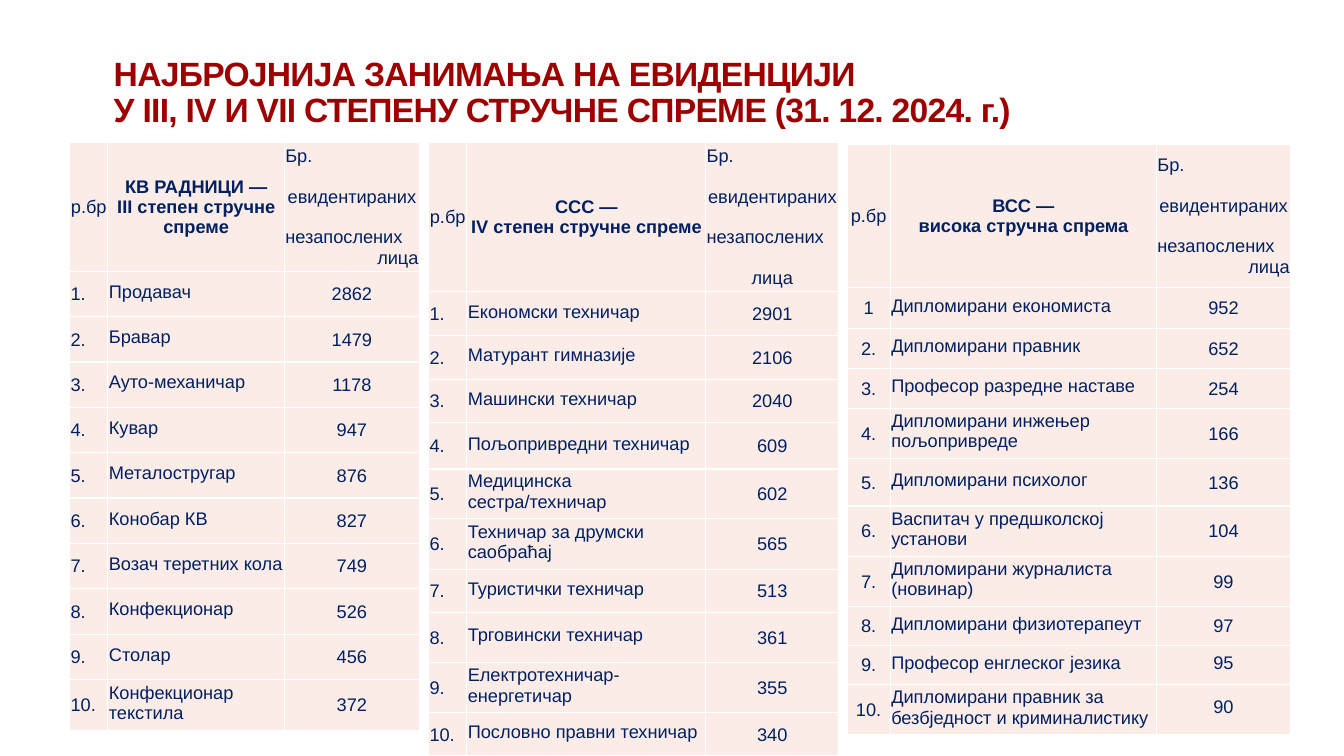
"""Build the slide of the most common occupations among registered unemployed people."""
from lxml.etree import SubElement
from pptx import Presentation
from pptx.dml.color import RGBColor
from pptx.enum.text import MSO_ANCHOR, PP_ALIGN
from pptx.oxml.ns import qn
from pptx.util import Inches, Pt

TITLE = "НАЈБРОЈНИЈА ЗАНИМАЊА НА ЕВИДЕНЦИЈИ\vУ III, IV И VII СТЕПЕНУ СТРУЧНЕ СПРЕМЕ (31. 12. 2024. г.)"
NUMBER_HEADER = "р.бр"
COUNT_HEADER = "Бр.\nевидентираних\nнезапослених\nлица"
TABLES = [
    {
        "place": (0.69, 1.41),
        "columns": (0.38, 1.75, 1.34),
        "rows": (1.22, 0.45, 0.45, 0.45, 0.45, 0.45, 0.45, 0.45, 0.45, 0.45, 0.51),
        "number_align": PP_ALIGN.LEFT,
        "last_header_line": (PP_ALIGN.RIGHT, 0),
        "first_number": "1.",
        "heading": "КВ РАДНИЦИ —\nIII степен стручне\nспреме",
        "occupations": [
            ("Продавач", 2862), ("Бравар", 1479), ("Ауто-механичар", 1178),
            ("Кувар", 947), ("Металостругар", 876), ("Конобар КВ", 827),
            ("Возач теретних кола", 749), ("Конфекционар", 526),
            ("Столар", 456), ("Конфекционар текстила", 372),
        ],
    },
    {
        "place": (4.25, 1.41),
        "columns": (0.38, 2.37, 1.32),
        "rows": (1.33, 0.44, 0.43, 0.43, 0.46, 0.42, 0.5, 0.43, 0.5, 0.43, 0.43),
        "number_align": PP_ALIGN.LEFT,
        "last_header_line": (PP_ALIGN.CENTER, 14.5),
        "first_number": "1.",
        "heading": "ССС —\nIV степен стручне спреме",
        "occupations": [
            ("Економски техничар", 2901), ("Матурант гимназије", 2106),
            ("Машински техничар", 2040), ("Пољопривредни техничар", 609),
            ("Медицинска сестра/техничар", 602), ("Техничар за друмски саобраћај", 565),
            ("Туристички техничар", 513), ("Трговински техничар", 361),
            ("Електротехничар-енергетичар", 355), ("Пословно правни техничар", 340),
        ],
    },
    {
        "place": (8.4, 1.43),
        "columns": (0.43, 2.64, 1.33),
        "rows": (1.42, 0.41, 0.4, 0.39, 0.5, 0.47, 0.5, 0.39, 0.39, 0.39, 0.35),
        "number_align": PP_ALIGN.CENTER,
        "last_header_line": (PP_ALIGN.RIGHT, 0),
        "first_number": "1",
        "heading": "ВСС —\nвисока стручна спрема",
        "occupations": [
            ("Дипломирани економиста", 952), ("Дипломирани правник", 652),
            ("Професор разредне наставе", 254), ("Дипломирани инжењер пољопривреде", 166),
            ("Дипломирани психолог", 136), ("Васпитач у предшколској установи", 104),
            ("Дипломирани журналиста (новинар)", 99), ("Дипломирани физиотерапеут", 97),
            ("Професор енглеског језика", 95),
            ("Дипломирани правник за безбједност и криминалистику", 90),
        ],
    },
]
FONT = "Arial"
RED = RGBColor(0x9E, 0x00, 0x00)
NAVY = RGBColor(0x00, 0x20, 0x60)
PINK = RGBColor(0xFC, 0xEC, 0xE8)
WHITE = RGBColor(0xFF, 0xFF, 0xFF)


def style_font(font, size, color, bold):
    font.name = FONT
    font.size = Pt(size)
    font.color.rgb = color
    font.bold = bold


def add_title(slide):
    shape = slide.shapes.add_textbox(Inches(1.03), Inches(0.42), Inches(11.27), Inches(1.01))
    text_frame = shape.text_frame
    text_frame.word_wrap = True
    text_frame.vertical_anchor = MSO_ANCHOR.MIDDLE
    text_frame.text = TITLE
    paragraph = text_frame.paragraphs[0]
    paragraph.line_spacing = 0.9
    for run in paragraph.runs:
        style_font(run.font, 24, RED, True)
        run.font._element.set("spc", "-50")


def add_borders(cell):
    properties = cell._tc.get_or_add_tcPr()
    for side in ("a:lnL", "a:lnR", "a:lnT", "a:lnB"):
        line = SubElement(properties, qn(side), w=str(Pt(1)))
        fill = SubElement(line, qn("a:solidFill"))
        SubElement(fill, qn("a:srgbClr"), val=str(WHITE))


def fill_cell(cell, text, alignment, bold=False, bottom=0):
    cell.margin_left = cell.margin_right = cell.margin_top = Inches(0.01)
    cell.margin_bottom = Inches(bottom)
    cell.vertical_anchor = MSO_ANCHOR.MIDDLE
    add_borders(cell)
    cell.fill.solid()
    cell.fill.fore_color.rgb = PINK
    cell.text_frame.text = text
    for paragraph in cell.text_frame.paragraphs:
        paragraph.alignment = alignment
        for run in paragraph.runs:
            style_font(run.font, 13, NAVY, bold)


def space_count_header(cell, last_line):
    lines = [(PP_ALIGN.LEFT, 0), (PP_ALIGN.CENTER, 14.5), (PP_ALIGN.LEFT, 14.5), last_line]
    for paragraph, (alignment, gap) in zip(cell.text_frame.paragraphs, lines):
        paragraph.alignment = alignment
        paragraph.space_before = Pt(gap)


def add_occupations(slide, content):
    columns, rows = content["columns"], content["rows"]
    left, top = content["place"]
    table = slide.shapes.add_table(
        len(rows), len(columns), Inches(left), Inches(top),
        Inches(sum(columns)), Inches(sum(rows))).table
    table.first_row = False
    table.horz_banding = False
    for column, width in zip(table.columns, columns):
        column.width = Inches(width)
    for row, height in zip(table.rows, rows):
        row.height = Inches(height)

    fill_cell(table.cell(0, 0), NUMBER_HEADER, PP_ALIGN.CENTER)
    fill_cell(table.cell(0, 1), content["heading"], PP_ALIGN.CENTER, bold=True)
    fill_cell(table.cell(0, 2), COUNT_HEADER, PP_ALIGN.CENTER)
    space_count_header(table.cell(0, 2), content["last_header_line"])
    for index, (occupation, count) in enumerate(content["occupations"], 1):
        number = content["first_number"] if index == 1 else f"{index}."
        fill_cell(table.cell(index, 0), number, content["number_align"])
        fill_cell(table.cell(index, 1), occupation, PP_ALIGN.LEFT, bottom=0.05)
        count_bottom = 0.05 if count < 96 else 0
        fill_cell(table.cell(index, 2), str(count), PP_ALIGN.CENTER, bottom=count_bottom)


def main():
    presentation = Presentation()
    presentation.slide_width = Inches(13.33)
    presentation.slide_height = Inches(7.5)
    slide = presentation.slides.add_slide(presentation.slide_layouts[6])
    add_title(slide)
    for content in TABLES:
        add_occupations(slide, content)
    presentation.save("out.pptx")


if __name__ == "__main__":
    main()
